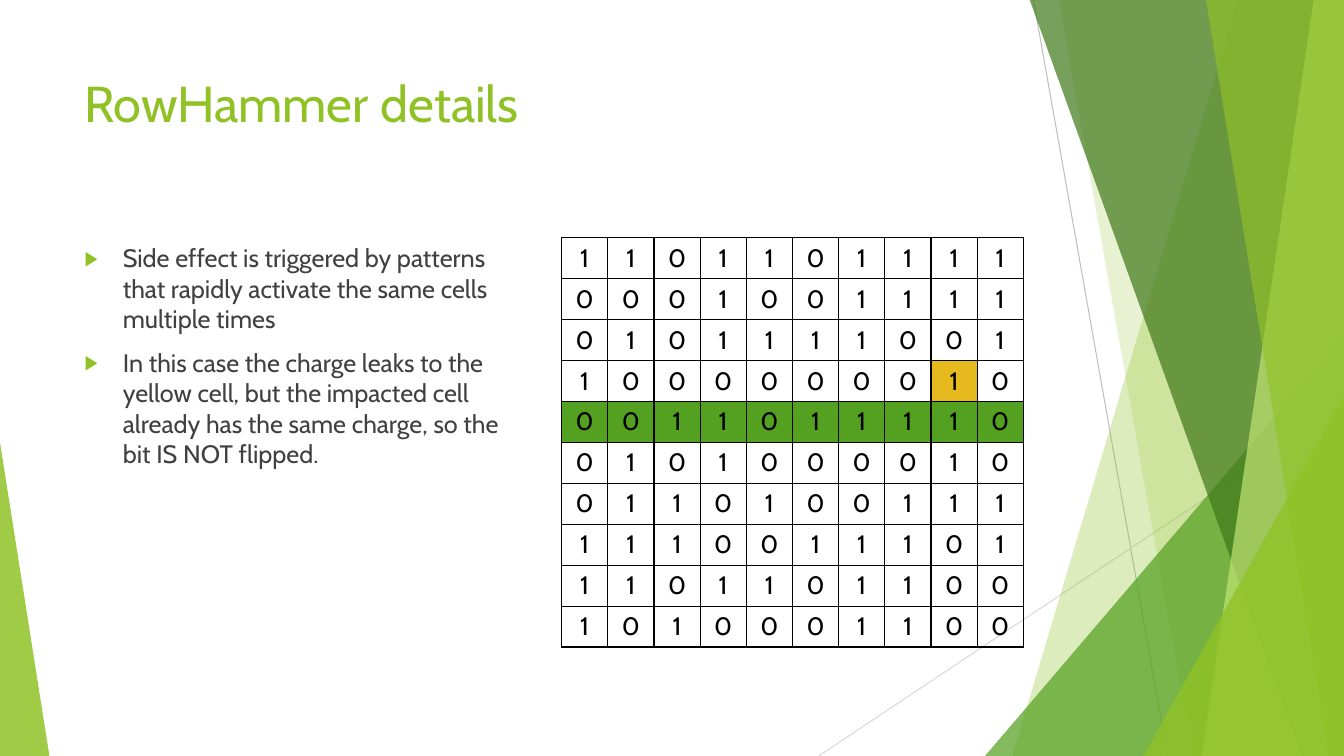
from lxml.etree import SubElement
from pptx import Presentation
from pptx.dml.color import RGBColor
from pptx.enum.shapes import MSO_CONNECTOR, MSO_SHAPE
from pptx.enum.text import PP_ALIGN
from pptx.oxml.ns import qn
from pptx.util import Inches, Pt

FONT = "Cabin"
COLORS = {
    "lime": "90C226", "green": "54A021", "dark_green": "3F7819",
    "pale_green": "C0E474", "yellow": "E6B91E", "text": "404040",
    "black": "000000", "gray": "BFBFBF", "light_gray": "D9D9D9",
}
TOP, BOTTOM, RIGHT = -0.01, 7.5, 13.33

# Left edge of each band at the top and the bottom, colour, opacity in percent
BACK_BANDS = [(12.28, 10.04, "lime", 30), (10.5, 11.83, "lime", 20)]
FRONT_BANDS = [(10.21, 12.91, "dark_green", 70), (13.03, 11.92, "pale_green", 70),
               (11.96, 13.18, "lime", 65)]

BULLETS = [
    "Side effect is triggered by patterns that rapidly activate the same cells multiple times",
    "In this case the charge leaks to the yellow cell, but the impacted cell "
    "already has the same charge, so the bit IS NOT flipped.",
]
MEMORY_ROWS = [
    "1101101111", "0001001111", "0101111001", "1000000010", "0011011110",
    "0101000010", "0110100111", "1110011101", "1101101100", "1010001100",
]
HAMMERED_ROW = 4
LEAK_CELL = (3, 8)


def rgb(name):
    return RGBColor.from_string(COLORS[name])


def paint(sp, color, opacity):
    """Give a shape a translucent fill without outline or shadow."""
    sp.shadow.inherit = False
    sp.line.fill.background()
    sp.fill.solid()
    sp.fill.fore_color.rgb = rgb(color)
    clr = sp.fill._xPr.find(qn("a:solidFill"))[0]
    SubElement(clr, qn("a:alpha"), val=str(opacity * 1000))


def add_line(slide, x1, y1, x2, y2, color):
    line = slide.shapes.add_connector(
        MSO_CONNECTOR.STRAIGHT, Inches(x1), Inches(y1), Inches(x2), Inches(y2))
    line.line.color.rgb = rgb(color)
    line.line.width = Pt(0.75)
    SubElement(line._element.spPr, qn("a:effectLst"))


def add_band(slide, top_x, bottom_x, color, opacity):
    """Draw a band from a slanted left side to the right edge of the slide."""
    builder = slide.shapes.build_freeform(Inches(top_x), Inches(TOP), scale=1.0)
    corners = [(RIGHT, TOP), (RIGHT, BOTTOM), (bottom_x, BOTTOM)]
    builder.add_line_segments([(Inches(x), Inches(y)) for x, y in corners], close=True)
    paint(builder.convert_to_shape(), color, opacity)


def add_triangle(slide, left, top, width, apex, color, opacity):
    """Draw a triangle that stands on the bottom edge of the slide."""
    sp = slide.shapes.add_shape(
        MSO_SHAPE.ISOSCELES_TRIANGLE, Inches(left), Inches(top),
        Inches(width), Inches(BOTTOM - top))
    sp.adjustments[0] = apex
    paint(sp, color, opacity)


def style_text(p, size, color):
    for r in p.runs:
        r.font.name = FONT
        r.font.size = Pt(size)
        r.font.color.rgb = rgb(color)


def add_text(slide, left, top, width, height, lines, size, color):
    box = slide.shapes.add_textbox(Inches(left), Inches(top), Inches(width), Inches(height))
    tf = box.text_frame
    tf.word_wrap = True
    tf.text = "\n".join(lines)
    for p in tf.paragraphs:
        style_text(p, size, color)
    return tf


def add_bullet(p):
    p.space_before = Pt(10)
    pPr = p._p.get_or_add_pPr()
    pPr.set("marL", str(Inches(0.38)))
    pPr.set("indent", str(Inches(-0.38)))
    SubElement(SubElement(pPr, qn("a:buClr")), qn("a:srgbClr"), val=COLORS["lime"])
    SubElement(pPr, qn("a:buSzPct"), val="80000")
    SubElement(pPr, qn("a:buFont"), typeface=FONT)
    SubElement(pPr, qn("a:buChar"), char="▶")


def add_borders(cell):
    tcPr = cell._tc.get_or_add_tcPr()
    for side in ("a:lnL", "a:lnR", "a:lnT", "a:lnB"):
        ln = SubElement(tcPr, qn(side), w=str(Pt(1)))
        SubElement(SubElement(ln, qn("a:solidFill")), qn("a:srgbClr"), val=COLORS["black"])


def fill_cell(cell, row, col):
    if (row, col) == LEAK_CELL or row == HAMMERED_ROW:
        cell.fill.solid()
        cell.fill.fore_color.rgb = rgb("green" if row == HAMMERED_ROW else "yellow")
    else:
        cell.fill.background()


def add_memory_table(slide):
    table = slide.shapes.add_table(
        len(MEMORY_ROWS), len(MEMORY_ROWS[0]),
        Inches(5.57), Inches(2.36), Inches(4.58), Inches(4.06)).table
    table.first_row = table.horz_banding = False
    for row, bits in enumerate(MEMORY_ROWS):
        for col, bit in enumerate(bits):
            cell = table.cell(row, col)
            cell.text = bit
            p = cell.text_frame.paragraphs[0]
            p.alignment = PP_ALIGN.CENTER
            style_text(p, 18, "black")
            add_borders(cell)
            fill_cell(cell, row, col)


def add_background(slide):
    add_line(slide, 10.25, 0, 11.58, BOTTOM, "gray")
    add_line(slide, RIGHT, 4.03, 8.12, BOTTOM, "light_gray")
    for band in BACK_BANDS:
        add_band(slide, *band)
    add_triangle(slide, 9.77, 3.33, 3.56, 1, "green", 72)
    for band in FRONT_BANDS:
        add_band(slide, *band)
    add_triangle(slide, 11.34, 3.93, 1.99, 1, "lime", 80)
    add_triangle(slide, 0, 4.39, 0.49, 0, "lime", 85)


def main():
    prs = Presentation()
    prs.slide_width, prs.slide_height = Inches(13.33), Inches(7.5)
    slide = prs.slides.add_slide(prs.slide_layouts[6])
    add_background(slide)
    add_text(slide, 0.74, 0.67, 9.4, 1.44, ["RowHammer details"], 36, "lime")
    body = add_text(slide, 0.74, 2.36, 4.58, 4.24, BULLETS, 18, "text")
    for p in body.paragraphs:
        add_bullet(p)
    add_memory_table(slide)
    prs.save("out.pptx")


if __name__ == "__main__":
    main()
